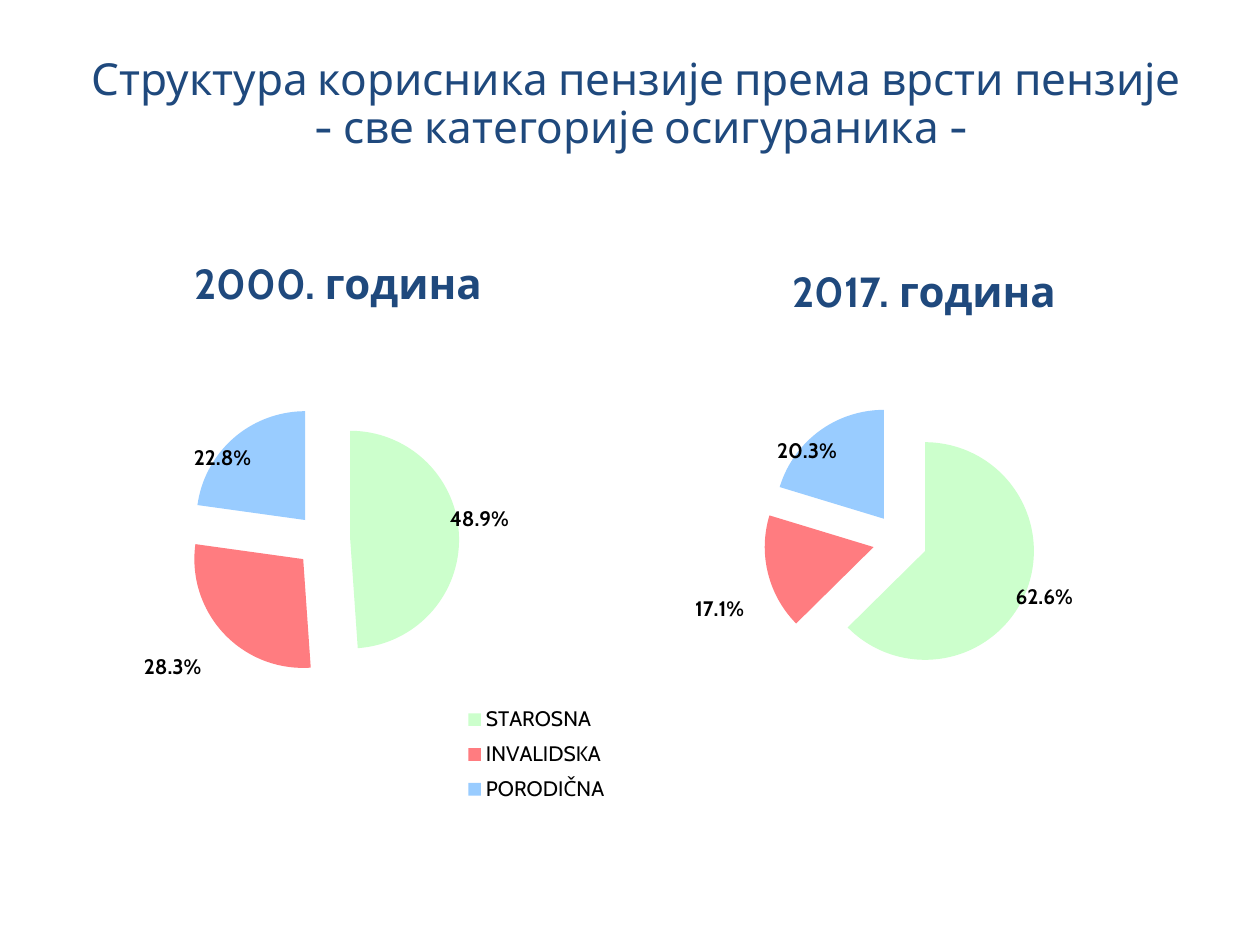
from lxml import etree
from pptx import Presentation
from pptx.chart.data import CategoryChartData
from pptx.dml.color import RGBColor
from pptx.enum.chart import XL_CHART_TYPE, XL_LABEL_POSITION, XL_LEGEND_POSITION
from pptx.enum.text import MSO_ANCHOR, PP_ALIGN
from pptx.oxml import parse_xml
from pptx.util import Cm, Pt

PIE = XL_CHART_TYPE.PIE
OUTER = XL_LABEL_POSITION.OUTSIDE_END
RIGHT = XL_LEGEND_POSITION.RIGHT
MIDDLE, BOTTOM = MSO_ANCHOR.MIDDLE, MSO_ANCHOR.BOTTOM
CENTER = PP_ALIGN.CENTER

FONT = "Cabin"
COLORS = {"navy": "1F497D", "black": "000000",
          "old": "CCFFCC", "disabled": "FF7C80", "family": "99CCFF"}
SLICES = ("old", "disabled", "family")
NS = "http://schemas.openxmlformats.org/drawingml/2006/chart"
PLOT = (0.076, 0.192, 0.782, 0.5)
KEY = (0.7, 0.73, 0.3, 0.21)


def color(name):
    return RGBColor.from_string(COLORS[name])


def style(font, size, name="black", bold=False, face=FONT):
    font.name, font.size, font.bold = face, Pt(size), bold
    font.color.rgb = color(name)


def add_text(slide, box, lines, size, anchor, bold=False, space=1):
    frame = slide.shapes.add_textbox(*map(Cm, box)).text_frame
    frame.word_wrap = True
    frame.vertical_anchor = anchor
    para = frame.paragraphs[0]
    para.alignment = CENTER
    para.line_spacing = space
    for i, line in enumerate(lines):
        if i:
            para.add_line_break()
        run = para.add_run()
        run.text = line
        style(run.font, size, "navy", bold)


def layout(modes, values):
    """Return a manual layout element with the given modes and x, y, w, h."""
    root = etree.Element(f"{{{NS}}}layout", nsmap={"c": NS})
    manual = etree.SubElement(root, f"{{{NS}}}manualLayout")
    items = list(modes.items()) + list(zip("xywh", values))
    for tag, val in items:
        etree.SubElement(manual, f"{{{NS}}}{tag}", val=str(val))
    return parse_xml(etree.tostring(root))


def place(parent, index, modes, values):
    for old in parent.findall(f"{{{NS}}}layout"):
        parent.remove(old)
    parent.insert(index, layout(modes, values))


def add_labels(series, shifts):
    """Show percentages, each moved from its default place by a shift."""
    labels = series.data_labels
    labels.show_value = False
    labels.show_percentage = True
    labels.number_format = "0.0%"
    labels.number_format_is_linked = False
    style(labels.font, 12, bold=True)
    for point, shift in zip(series.points, shifts):
        label = point.data_label
        style(label.font, 12, bold=True)
        label.position = OUTER
    node = series.format and labels._element
    for item, shift in zip(node.findall(f"{{{NS}}}dLbl"), shifts):
        place(item, 1, {}, shift)
        fmt = etree.Element(f"{{{NS}}}numFmt", formatCode="0.0%", sourceLinked="0")
        item.insert(2, fmt)
        item.find(f"{{{NS}}}showVal").set("val", "0")
        item.find(f"{{{NS}}}showPercent").set("val", "1")
    for lead in node.findall(f"{{{NS}}}showLeaderLines"):
        lead.set("val", "0")


def add_pie(slide, box, names, values, shifts, key=False):
    data = CategoryChartData()
    data.categories = names
    data.add_series("Series 1", values)
    chart = slide.shapes.add_chart(PIE, *map(Cm, box), data).chart
    chart.has_title = False
    style(chart.font, 10, face="Calibri")
    chart.plots[0].vary_by_categories = True

    series = chart.plots[0].series[0]
    for i, name in enumerate(SLICES):
        form = series.points[i].format
        form.fill.solid()
        form.fill.fore_color.rgb = color(name)
        form.line.fill.background()
    first = chart.element.xpath(".//c:dPt")[0]
    first.addprevious(etree.Element(f"{{{NS}}}explosion", val="25"))
    add_labels(series, shifts)

    edges = {"xMode": "edge", "yMode": "edge"}
    area = chart.element.xpath(".//c:plotArea")[0]
    place(area, 0, {"layoutTarget": "inner", **edges}, PLOT)
    chart.has_legend = key
    if key:
        chart.legend.position = RIGHT
        chart.legend.include_in_layout = False
        style(chart.legend.font, 12)
        place(chart.element.xpath(".//c:legend")[0], 1, edges, KEY)


def main():
    deck = Presentation()
    deck.slide_width, deck.slide_height = Cm(25.4), Cm(19.05)
    slide = deck.slides.add_slide(deck.slide_layouts[6])
    add_text(slide, (1.5, 0.53, 22.86, 3.18),
             ("Структура корисника пензије према врсти пензије ",
              "- све категорије осигураника -"), 25.2, MIDDLE, space=0.9)
    add_text(slide, (2.69, 5.16, 8.26, 1.17), ("2000. година",), 24, BOTTOM, True)
    add_text(slide, (14.5, 5.33, 8.26, 1.17), ("2017. година",), 24, BOTTOM, True)
    add_pie(slide, (12.9, 6.05, 11.23, 10.97), ("1", "2", "3"),
            (62.6, 17.1, 20.3), ((-0.03, -0.02), (-0.03, 0.04), (0.04, 0.07)))
    add_pie(slide, (1.27, 6.05, 11.23, 10.97),
            ("STAROSNA", "INVALIDSKA", "PORODIČNA"), (48.9, 28.3, 22.8),
            ((-0.03, -0.03), (-0.03, 0.03), (0.04, 0.07)), key=True)
    deck.save("out.pptx")


if __name__ == "__main__":
    main()
